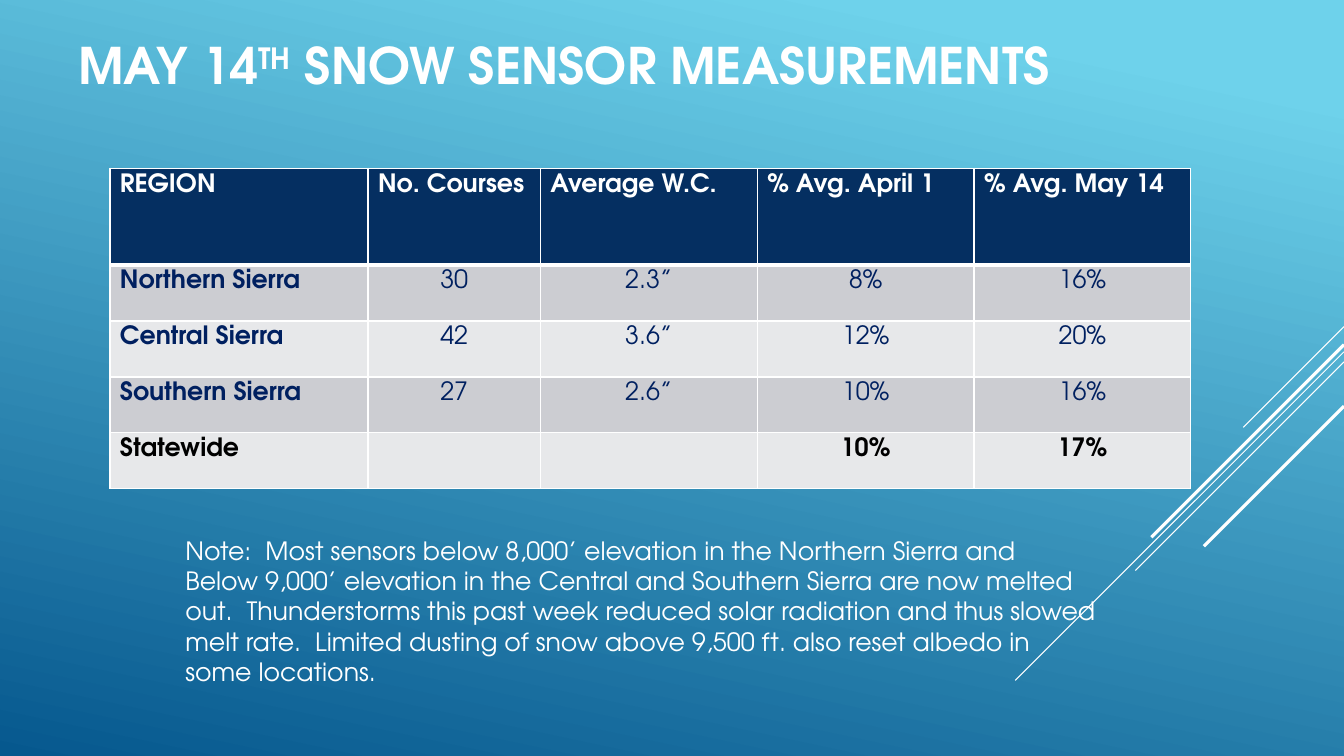
"""Build the slide of May 14th snow sensor measurements."""
from dataclasses import dataclass

from lxml.etree import SubElement
from pptx import Presentation
from pptx.dml.color import RGBColor
from pptx.enum.shapes import MSO_CONNECTOR
from pptx.enum.text import MSO_ANCHOR, PP_ALIGN
from pptx.oxml.ns import qn
from pptx.util import Inches, Pt

WHITE, NAVY, INK, BLACK = "FFFFFF", "052F61", "002060", "000000"
BANDS = ("CCCDD2", "E7E8EA")
SLIDE_WIDTH = 13.33
COLUMN_WIDTHS = (2.56, 1.71, 2.15, 2.15, 2.15)
HEADER_HEIGHT, REGION_HEIGHT = 0.96, 0.555


@dataclass(frozen=True)
class Streak:
    """A 45 degree line falling leftwards from the right edge."""
    top: float
    run: float
    weight: float


@dataclass(frozen=True)
class TextBlock:
    """A text box whose paragraphs are lists of (text, baseline) pieces."""
    left: float
    top: float
    width: float
    height: float
    size: int
    bold: bool
    anchor: MSO_ANCHOR
    paragraphs: list


@dataclass(frozen=True)
class RegionRow:
    """One row of the table with its text colour and fill."""
    values: tuple
    color: str
    fill: str
    bold_values: bool = False
    header: bool = False


STREAKS = (
    Streak(3.24, 1.0, 0.75),
    Streak(3.49, 3.26, 0.75),
    Streak(3.59, 2.07, 0.75),
    Streak(3.42, 1.91, 2.25),
    Streak(4.03, 1.39, 2.25),
)

TITLE = TextBlock(
    0.68, 0.13, 10.67, 1.02, 36, True, MSO_ANCHOR.MIDDLE,
    [[("MAY 14", 0), ("TH", 30), (" SNOW SENSOR MEASUREMENTS", 0)]],
)
NOTE = TextBlock(
    1.74, 5.26, 9.26, 1.62, 18, False, MSO_ANCHOR.TOP,
    [
        [("Note:  Most sensors below 8,000’ elevation in the Northern Sierra and", 0)],
        [("Below 9,000’ elevation in the Central and Southern Sierra are now melted "
          "out.  Thunderstorms this past week reduced solar radiation and thus slowed "
          "melt rate.  Limited dusting of snow above 9,500 ft. also reset albedo in "
          "some locations.", 0)],
    ],
)

REGIONS = (
    RegionRow(("REGION", "No. Courses", "Average W.C.", "% Avg. April 1", "% Avg. May 14"),
              WHITE, NAVY, bold_values=True, header=True),
    RegionRow(("Northern Sierra", "30", "2.3”", "8%", "16%"), INK, BANDS[0]),
    RegionRow(("Central Sierra", "42", "3.6”", "12%", "20%"), INK, BANDS[1]),
    RegionRow(("Southern Sierra", "27", "2.6”", "10%", "16%"), INK, BANDS[0]),
    RegionRow(("Statewide", "", "", "10%", "17%"), BLACK, BANDS[1], bold_values=True),
)


def rgb(code: str) -> RGBColor:
    """Turn a hex string into a colour."""
    return RGBColor.from_string(code)


def format_font(font, size: int, bold: bool, color: str) -> None:
    """Apply the slide's typeface with the given look."""
    look = {"name": "TeX Gyre Adventor", "size": Pt(size), "bold": bold}
    for attribute, value in look.items():
        setattr(font, attribute, value)
    font.color.rgb = rgb(color)


def paint_background(slide) -> None:
    """Fill the background with a light to dark blue gradient."""
    fill = slide.background.fill
    fill.gradient()
    fill.gradient_angle = 258
    for stop, (position, color) in zip(fill.gradient_stops, ((0.1, "6ED2EB"), (1, "06588E"))):
        stop.position = position
        stop.color.rgb = rgb(color)


def draw_streak(slide, streak: Streak) -> None:
    """Draw one diagonal line."""
    line = slide.shapes.add_connector(
        MSO_CONNECTOR.STRAIGHT, Inches(SLIDE_WIDTH), Inches(streak.top),
        Inches(SLIDE_WIDTH - streak.run), Inches(streak.top + streak.run))
    line.line.color.rgb = rgb(WHITE)
    line.line.width = Pt(streak.weight)
    SubElement(line._element.spPr, qn("a:effectLst"))


def draw_text(slide, block: TextBlock) -> None:
    """Draw a white text block."""
    frame = slide.shapes.add_textbox(
        Inches(block.left), Inches(block.top),
        Inches(block.width), Inches(block.height)).text_frame
    frame.word_wrap = True
    frame.vertical_anchor = block.anchor
    for index, pieces in enumerate(block.paragraphs):
        paragraph = frame.add_paragraph() if index else frame.paragraphs[0]
        for text, baseline in pieces:
            run = paragraph.add_run()
            run.text = text
            format_font(run.font, block.size, block.bold, WHITE)
            if baseline:
                run._r.get_or_add_rPr().set("baseline", str(baseline * 1000))


def draw_borders(cell, weights: dict[str, float]) -> None:
    """Give a cell white borders of the given point weights."""
    properties = cell._tc.get_or_add_tcPr()
    for side, weight in weights.items():
        border = SubElement(properties, qn(f"a:ln{side}"), w=str(Pt(weight)))
        SubElement(SubElement(border, qn("a:solidFill")), qn("a:srgbClr"), val=WHITE)


def draw_region_table(slide) -> None:
    """Draw the table of measurements by region."""
    heights = [HEADER_HEIGHT if region.header else REGION_HEIGHT for region in REGIONS]
    table = slide.shapes.add_table(
        len(REGIONS), len(COLUMN_WIDTHS), Inches(1.09), Inches(1.67),
        Inches(sum(COLUMN_WIDTHS)), Inches(sum(heights))).table
    for column, width in zip(table.columns, COLUMN_WIDTHS):
        column.width = Inches(width)
    for index, (row, region, height) in enumerate(zip(table.rows, REGIONS, heights)):
        row.height = Inches(height)
        weights = {"L": 1, "R": 1, "T": 3 if index == 1 else 1, "B": 3 if region.header else 1}
        for position, (cell, value) in enumerate(zip(row.cells, region.values)):
            draw_borders(cell, weights)
            cell.fill.solid()
            cell.fill.fore_color.rgb = rgb(region.fill)
            paragraph = cell.text_frame.paragraphs[0]
            centred = position > 0 and not region.header
            paragraph.alignment = PP_ALIGN.CENTER if centred else PP_ALIGN.LEFT
            if value:
                run = paragraph.add_run()
                run.text = value
                format_font(run.font, 18, position == 0 or region.bold_values, region.color)


def main() -> None:
    """Build and save the slide."""
    presentation = Presentation()
    presentation.slide_width = Inches(SLIDE_WIDTH)
    presentation.slide_height = Inches(7.5)
    slide = presentation.slides.add_slide(presentation.slide_layouts[6])
    paint_background(slide)
    for streak in STREAKS:
        draw_streak(slide, streak)
    draw_text(slide, TITLE)
    draw_region_table(slide)
    draw_text(slide, NOTE)
    presentation.save("out.pptx")


if __name__ == "__main__":
    main()
